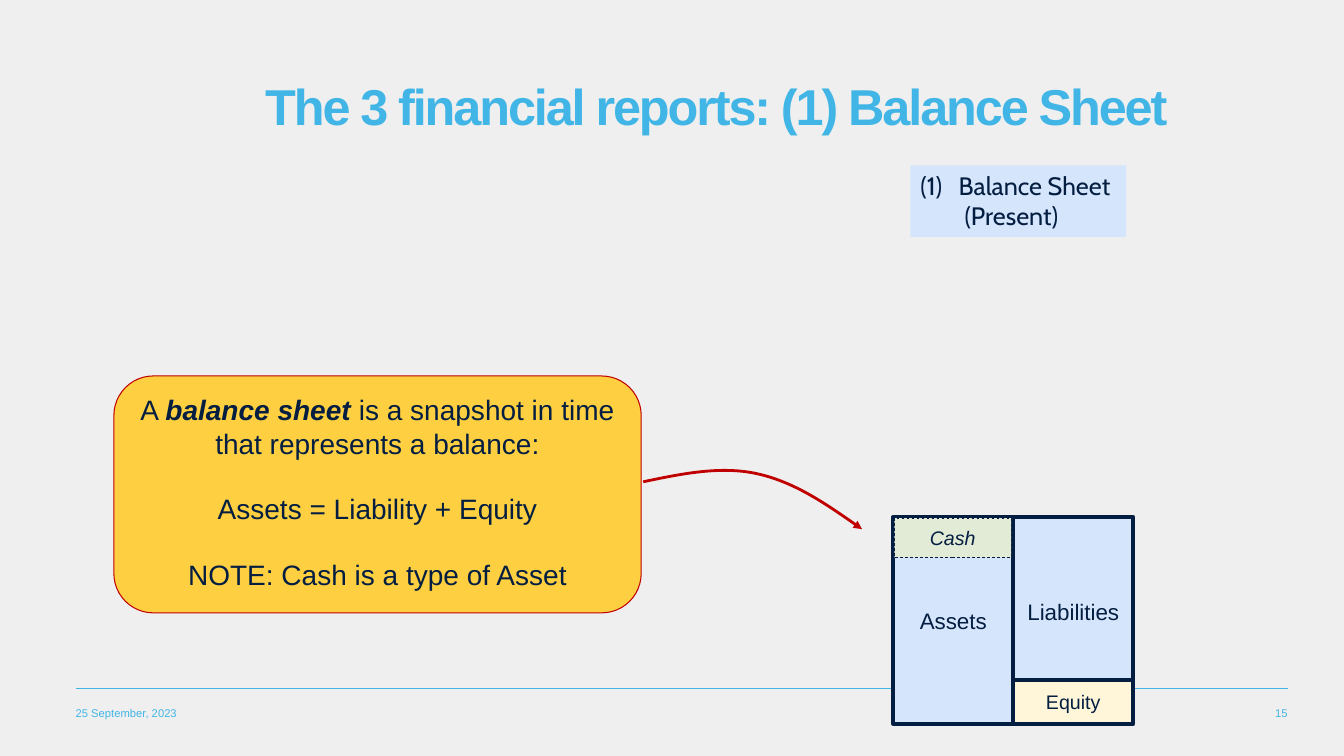
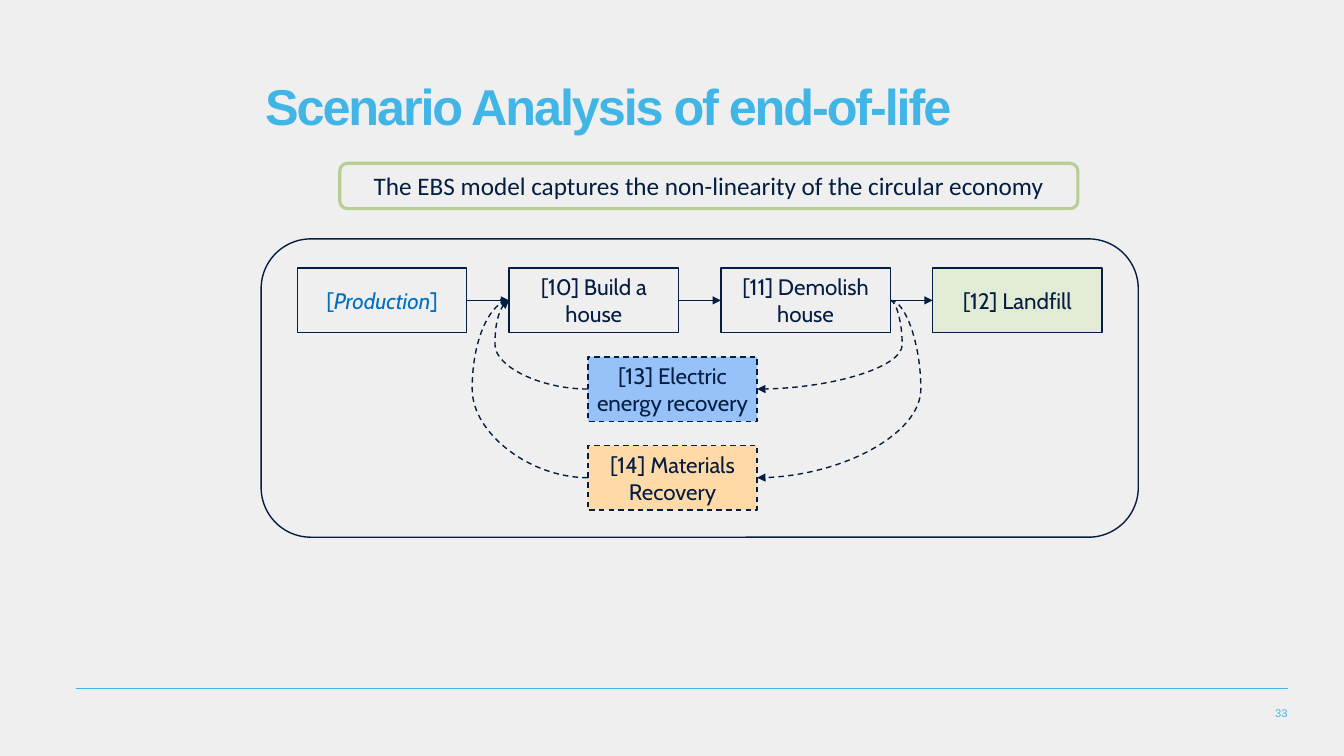
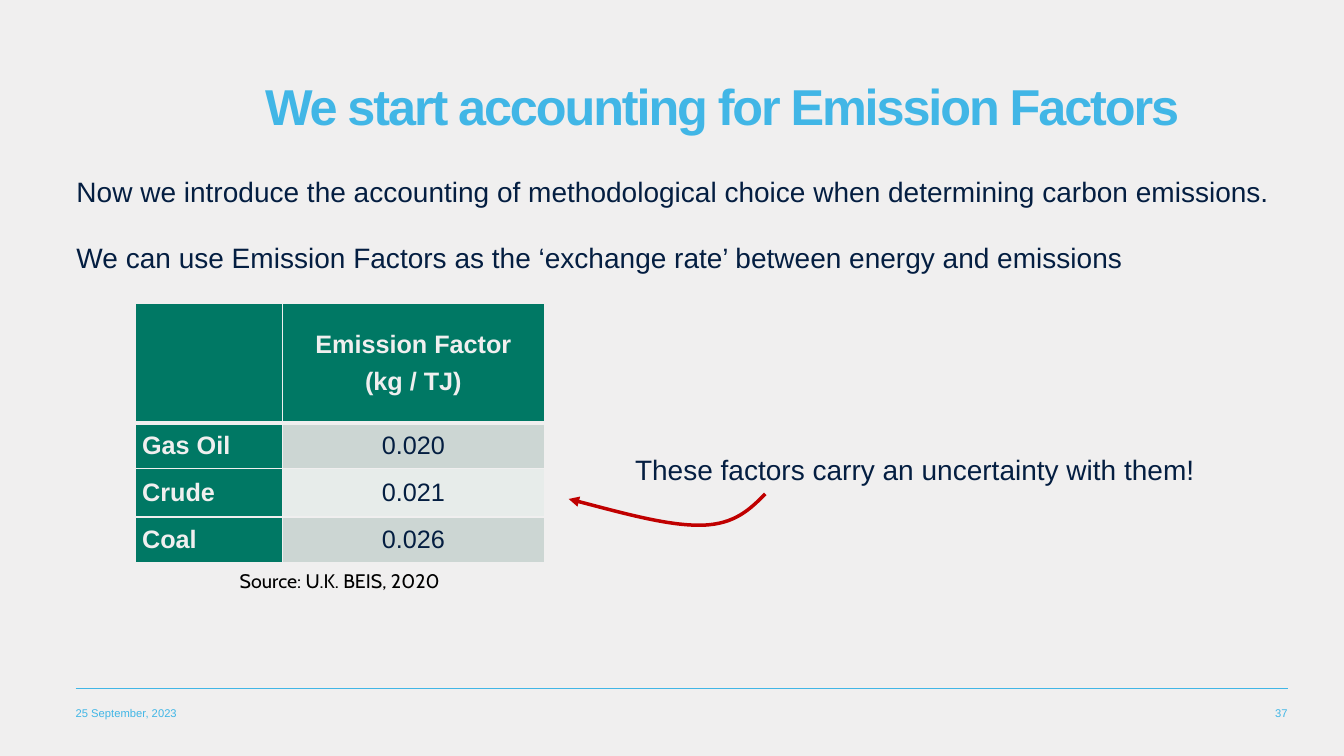
from lxml import etree
from pptx import Presentation
from pptx.dml.color import RGBColor
from pptx.enum.dml import MSO_LINE_DASH_STYLE as DASH
from pptx.enum.shapes import MSO_CONNECTOR as LINK, MSO_SHAPE as SHAPE
from pptx.enum.text import MSO_ANCHOR as ANCHOR, PP_ALIGN as ALIGN
from pptx.oxml.ns import qn
from pptx.util import Inches, Pt

SKY = RGBColor(0x41, 0xB6, 0xE6)
NAVY = RGBColor(0x04, 0x1E, 0x41)
PAPER = RGBColor(0xF0, 0xEF, 0xEF)
PALE_BLUE = RGBColor(0xD5, 0xE6, 0xFC)
CREAM = RGBColor(0xFF, 0xF5, 0xD9)
AMBER = RGBColor(0xFD, 0xCF, 0x41)
RED = RGBColor(0xC0, 0x00, 0x00)
PALE_GREEN = RGBColor(0xE2, 0xEB, 0xD5)
LEAF = RGBColor(0xB7, 0xCE, 0x95)
BLUE = RGBColor(0x97, 0xC1, 0xF9)
PEACH = RGBColor(0xFF, 0xD9, 0xA7)
INK_BLUE = RGBColor(0x00, 0x70, 0xC0)
TEAL = RGBColor(0x00, 0x78, 0x64)
GREY_DARK = RGBColor(0xCC, 0xD6, 0xD3)
GREY_LIGHT = RGBColor(0xE7, 0xEC, 0xEA)
BLACK = RGBColor(0, 0, 0)

NO_MARGINS = dict.fromkeys(
    ("margin_left", "margin_top", "margin_right", "margin_bottom"), 0)


def apply(target, values):
    for attribute, value in values.items():
        setattr(target, attribute, value)


def write(frame, paragraphs, size, font="Arial", color=NAVY, align=ALIGN.LEFT,
          gap=0, bold=False, **frame_format):
    apply(frame, {"word_wrap": True, "vertical_anchor": ANCHOR.TOP,
                  **frame_format})
    for index, runs in enumerate(paragraphs):
        paragraph = frame.paragraphs[0] if index == 0 else frame.add_paragraph()
        paragraph.alignment = align
        if index and gap:
            paragraph.space_before = Pt(gap)
        for text, extra in [(runs, {})] if isinstance(runs, str) else runs:
            run = paragraph.add_run()
            run.text = text
            apply(run.font, {"size": Pt(size), "name": font, "bold": bold,
                             **extra})
            run.font.color.rgb = color


def text_box(slide, at, paragraphs, size, **style):
    box = slide.shapes.add_textbox(*map(Inches, at))
    write(box.text_frame, paragraphs, size, **style)


def set_line(line, color, width, dash=None):
    line.color.rgb = color
    line.width = Pt(width)
    if dash:
        line.dash_style = dash


def add_arrowhead(shape):
    etree.SubElement(shape.line._get_or_add_ln(), qn("a:tailEnd"),
                     type="triangle")


def panel(slide, at, fill=None, line=None, kind=SHAPE.RECTANGLE):
    shape = slide.shapes.add_shape(kind, *map(Inches, at))
    shape.shadow.inherit = False
    if fill is None:
        shape.fill.background()
    else:
        shape.fill.solid()
        shape.fill.fore_color.rgb = fill
    if line is None:
        shape.line.fill.background()
    else:
        set_line(shape.line, *line)
    return shape


def labelled(slide, at, paragraphs, size, fill, line, **style):
    shape = panel(slide, at, fill, line)
    write(shape.text_frame, paragraphs, size,
          **{"align": ALIGN.CENTER, "vertical_anchor": ANCHOR.MIDDLE, **style})
    return shape


def connector(slide, kind, start, end, color, width, dash=None):
    link = slide.shapes.add_connector(kind, *map(Inches, (*start, *end)))
    set_line(link.line, color, width, dash)
    etree.SubElement(link._element.spPr, qn("a:effectLst"))
    return link


def flow(slide, source, source_side, target, target_side, bend=None):
    kind, dash = (LINK.STRAIGHT, None) if bend is None else (LINK.CURVE, DASH.DASH)
    link = connector(slide, kind, (0, 0), (1, 1), NAVY, 1, dash)
    link.begin_connect(source, source_side)
    link.end_connect(target, target_side)
    add_arrowhead(link)
    if bend is not None:
        geometry = link._element.spPr.find(qn("a:prstGeom"))
        guides = geometry.find(qn("a:avLst"))
        if guides is None:
            guides = etree.SubElement(geometry, qn("a:avLst"))
        etree.SubElement(guides, qn("a:gd"), name="adj1",
                         fmla=f"val {round(bend * 100000)}")


def curved_arrow(slide, points, width):
    emu_points = [(Inches(x), Inches(y)) for x, y in points]
    builder = slide.shapes.build_freeform(*emu_points[0])
    builder.add_line_segments(emu_points[1:], close=False)
    arrow = builder.convert_to_shape()
    arrow.shadow.inherit = False
    arrow.fill.background()
    set_line(arrow.line, RED, width)
    add_arrowhead(arrow)
    steps = list(arrow._element.iter(qn("a:lnTo")))
    outline = steps[0].getparent()
    for first in range(0, len(steps), 3):
        bezier = etree.SubElement(outline, qn("a:cubicBezTo"))
        for step in steps[first:first + 3]:
            bezier.append(step[0])
            outline.remove(step)


def new_slide(deck, title, number, date=None, title_width=9.22):
    slide = deck.slides.add_slide(deck.slide_layouts[5])
    heading = slide.shapes.title
    apply(heading, {"left": Inches(2.53), "top": Inches(0.24),
                    "width": Inches(title_width), "height": Inches(1.16)})
    write(heading.text_frame, [title], 36, color=SKY, bold=True,
          vertical_anchor=ANCHOR.BOTTOM)
    paragraph = heading.text_frame.paragraphs[0]
    paragraph.line_spacing = 0.9
    paragraph.runs[0]._r.get_or_add_rPr().set("spc", "-150")
    connector(slide, LINK.STRAIGHT, (0.75, 6.83), (12.77, 6.83), SKY, 0.5)
    if date:
        text_box(slide, (0.75, 7.01, 3, 0.19), [date], 8, color=SKY, **NO_MARGINS)
    text_box(slide, (12.25, 7.01, 0.52, 0.19), [str(number)], 8, color=SKY,
             align=ALIGN.RIGHT, **NO_MARGINS)
    return slide


def numbered_heading(slide):
    label = panel(slide, (9.03, 1.64, 2.14, 0.71), PALE_BLUE)
    frame = label.text_frame
    write(frame, ["Balance Sheet", "(Present)"], 18, font="Cabin")
    numbered, below = [p._p.get_or_add_pPr() for p in frame.paragraphs]
    numbered.set("marL", str(Inches(0.38)))
    numbered.set("indent", str(-Inches(0.38)))
    etree.SubElement(numbered, qn("a:buFont"), typeface="+mj-lt")
    etree.SubElement(numbered, qn("a:buAutoNum"), type="arabicParenBoth")
    below.set("marL", str(Inches(0.44)))
    below.set("indent", "0")


def balance_sheet_slide(deck, date):
    slide = new_slide(deck, "The 3 financial reports: (1) Balance Sheet", 15, date)
    numbered_heading(slide)
    frame_line = (NAVY, 3)
    labelled(slide, (8.86, 5.13, 1.19, 2.05), ["Assets"], 16, PALE_BLUE, frame_line)
    labelled(slide, (10.05, 5.13, 1.19, 1.62), ["Liabilities"], 16, PALE_BLUE,
             frame_line, margin_top=Inches(0.31))
    labelled(slide, (10.05, 6.75, 1.19, 0.43), ["Equity"], 14, CREAM, frame_line)
    definition = panel(slide, (1.13, 3.73, 5.23, 2.35), AMBER, (RED, 0.75),
                       SHAPE.ROUNDED_RECTANGLE)
    write(definition.text_frame, [
        [("A ", {}), ("balance sheet ", {"bold": True, "italic": True}),
         ("is a snapshot in time that represents a balance:", {})],
        "Assets = Liability + Equity",
        "NOTE: Cash is a type of Asset",
    ], 20, align=ALIGN.CENTER, gap=23)
    curved_arrow(slide, [(6.38, 4.78), (6.76, 4.7), (7.15, 4.62), (7.51, 4.7),
                         (7.87, 4.78), (8.21, 5.01), (8.55, 5.25)], 2)
    labelled(slide, (8.87, 5.14, 1.16, 0.39), [[("Cash", {"italic": True})]], 14,
             PALE_GREEN, (NAVY, 0.5, DASH.DASH))


def scenario_slide(deck):
    slide = new_slide(deck, "Scenario Analysis of end-of-life", 33)
    width, height, top, row_step = 1.68, 0.64, 2.66, 0.88
    stages = [
        ([[("[", {}), ("Production", {"italic": True}), ("]", {})]], PAPER, INK_BLUE),
        (["[10] Build a house"], PAPER, NAVY),
        (["[11] Demolish house"], PAPER, NAVY),
        (["[12] Landfill"], PALE_GREEN, NAVY),
    ]
    chain = [
        labelled(slide, (2.95 + 2.1 * column, top, width, height), text, 16, fill,
                 (NAVY, 1), font="Cabin", color=color)
        for column, (text, fill, color) in enumerate(stages)
    ]
    for before, after in zip(chain, chain[1:]):
        flow(slide, before, 3, after, 1)
    build, demolish = chain[1:3]
    recoveries = [
        (["[13] Electric", "energy recovery"], BLUE, -0.09, 1.18),
        (["[14] Materials", "Recovery"], PEACH, -0.23, 1.47),
    ]
    for row, (text, fill, bend_in, bend_out) in enumerate(recoveries, 1):
        recovery = labelled(slide, (5.83, top + row * row_step, width, height), text,
                            16, fill, (NAVY, 1, DASH.DASH), font="Cabin",
                            word_wrap=False)
        flow(slide, demolish, 3, recovery, 3, bend_in)
        flow(slide, recovery, 1, build, 1, bend_out)
    message = panel(slide, (3.37, 1.62, 7.32, 0.45), PAPER, (LEAF, 2.25),
                    SHAPE.ROUNDED_RECTANGLE)
    write(message.text_frame,
          ["The EBS model captures the non-linearity of the circular economy"],
          18, font="Calibri", align=ALIGN.CENTER)
    panel(slide, (2.59, 2.37, 8.7, 2.96), None, (NAVY, 1), SHAPE.ROUNDED_RECTANGLE)


def style_cell(cell, fill, borders):
    properties = cell._tc.get_or_add_tcPr()
    for side, width in borders.items():
        border = etree.SubElement(properties, qn(f"a:ln{side}"), w=str(Pt(width)))
        solid = etree.SubElement(border, qn("a:solidFill"))
        etree.SubElement(solid, qn("a:srgbClr"), val=str(PAPER))
    cell.fill.solid()
    cell.fill.fore_color.rgb = fill
    apply(cell, {"margin_left": Inches(0.07), "margin_right": Inches(0.07),
                 "margin_top": 0, "margin_bottom": 0,
                 "vertical_anchor": ANCHOR.MIDDLE})


def factor_table(slide):
    rows = [
        ([], ["Emission Factor", "(kg / TJ)"]),
        (["Gas Oil"], ["0.020"]),
        (["Crude"], ["0.021"]),
        (["Coal"], ["0.026"]),
    ]
    table = slide.shapes.add_table(
        4, 2, *map(Inches, (1.34, 3.01, 4.06, 2.57))).table
    for column, width in zip(table.columns, (1.46, 2.6)):
        column.width = Inches(width)
    for row, height in zip(table.rows, (1.19, 0.45, 0.48, 0.45)):
        row.height = Inches(height)
    for r, row in enumerate(rows):
        borders = {"L": 1, "R": 1, "T": 3 if r == 1 else 1, "B": 3 if r == 0 else 1}
        for c, text in enumerate(row):
            header = r == 0 or c == 0
            cell = table.cell(r, c)
            fill = TEAL if header else GREY_DARK if r % 2 else GREY_LIGHT
            style_cell(cell, fill, borders)
            write(cell.text_frame, text, 18, color=PAPER if header else NAVY,
                  bold=header, align=ALIGN.CENTER if c else ALIGN.LEFT, gap=6,
                  vertical_anchor=ANCHOR.MIDDLE)


def emission_slide(deck, date):
    slide = new_slide(deck, "We start accounting for Emission Factors", 37, date, 9.43)
    factor_table(slide)
    text_box(slide, (1.76, 5.59, 3.22, 0.34), ["Source: U.K. BEIS, 2020"], 14,
             font="Cabin", color=BLACK, align=ALIGN.CENTER)
    text_box(slide, (6.2, 4.44, 5.79, 0.44),
             ["These factors carry an uncertainty with them!"], 20)
    curved_arrow(slide, [(7.59, 4.9), (7.44, 5.05), (7.29, 5.2), (6.97, 5.21),
                         (6.64, 5.22), (6.14, 5.08), (5.64, 4.95)], 2.5)
    text_box(slide, (0.66, 1.68, 12.12, 1.11), [
        "Now we introduce the accounting of methodological choice when "
        "determining carbon emissions.",
        "We can use Emission Factors as the ‘exchange rate’ between energy "
        "and emissions",
    ], 20, gap=23)


def main():
    deck = Presentation()
    deck.slide_width, deck.slide_height = Inches(13.33), Inches(7.5)
    backdrop = deck.slide_master.background.fill
    backdrop.solid()
    backdrop.fore_color.rgb = PAPER
    date = "25 September, 2023"
    balance_sheet_slide(deck, date)
    scenario_slide(deck)
    emission_slide(deck, date)
    deck.save("out.pptx")


if __name__ == "__main__":
    main()
